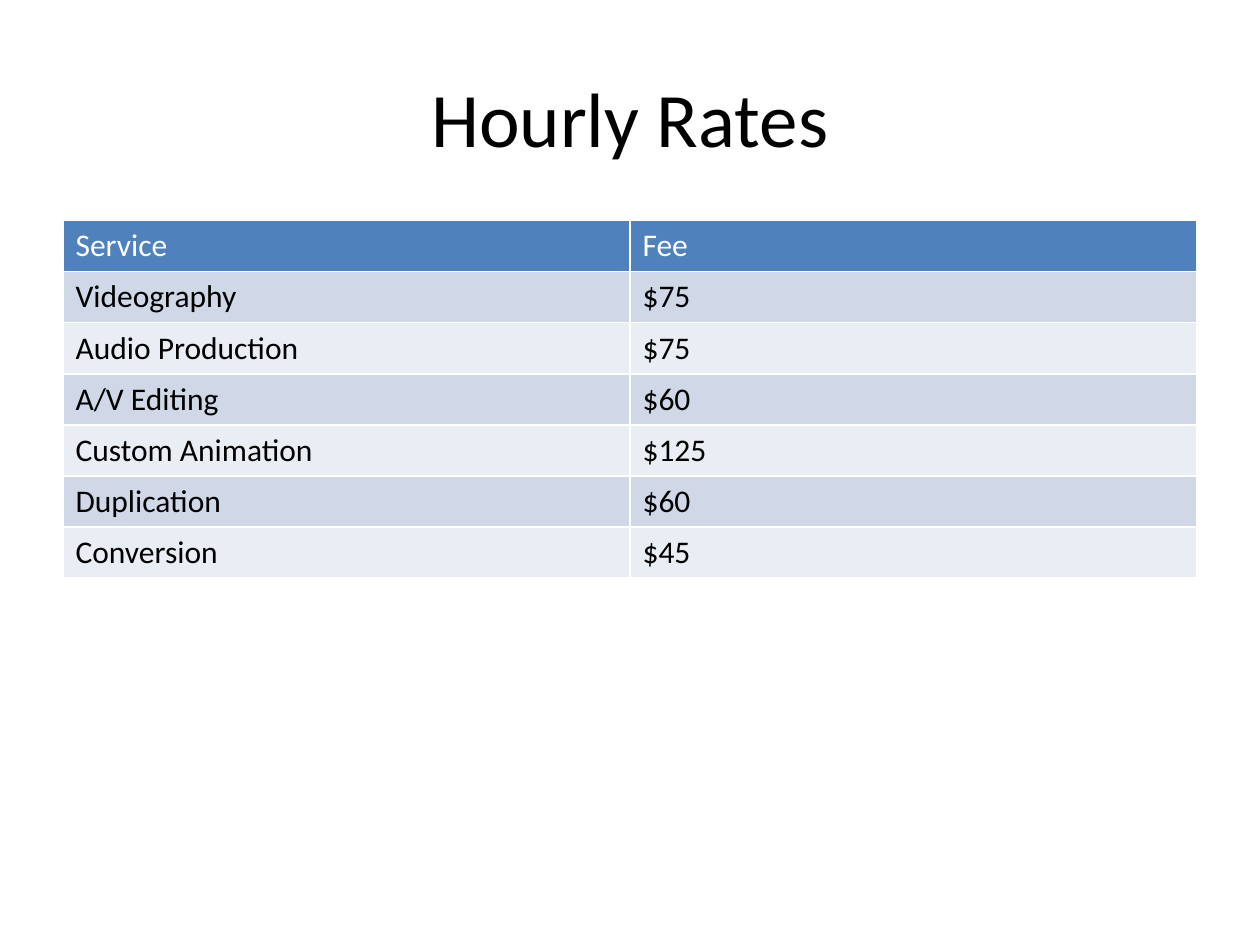
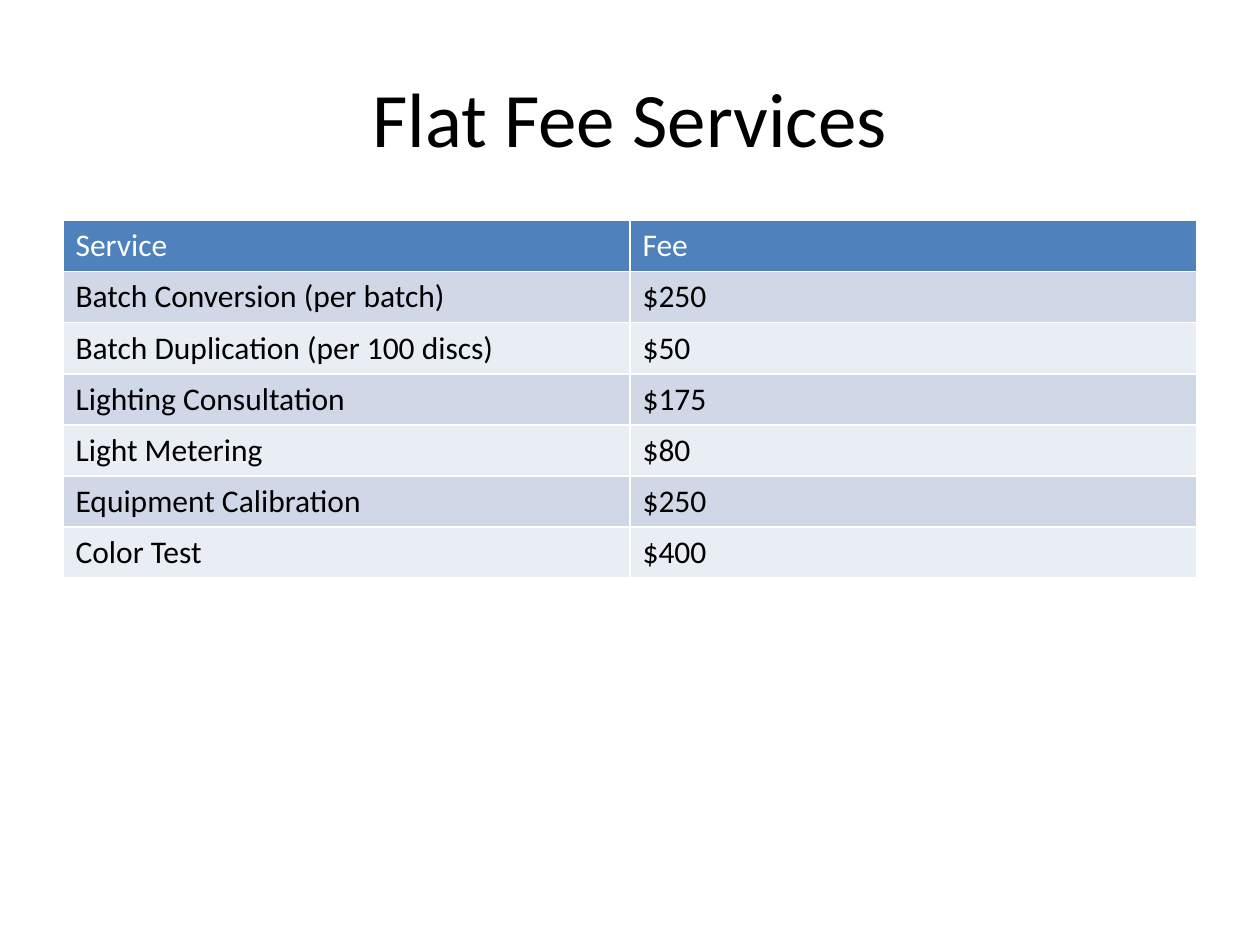
from pptx import Presentation
from pptx.dml.color import RGBColor
from pptx.enum.text import MSO_ANCHOR, PP_ALIGN
from pptx.util import Inches, Pt

LEFT, CENTER = PP_ALIGN.LEFT, PP_ALIGN.CENTER
MIDDLE = MSO_ANCHOR.MIDDLE

BLACK = RGBColor(0x00, 0x00, 0x00)
WHITE = RGBColor(0xFF, 0xFF, 0xFF)
HEADER_BLUE = RGBColor(0x4F, 0x81, 0xBD)
BANDS = [RGBColor(0xE9, 0xED, 0xF4), RGBColor(0xD0, 0xD8, 0xE8)]
FONT = "Calibri"

HEADINGS = ("Service", "Fee")
PRICE_LISTS = {
    "Hourly Rates": [
        ("Videography", "$75"),
        ("Audio Production", "$75"),
        ("A/V Editing", "$60"),
        ("Custom Animation", "$125"),
        ("Duplication", "$60"),
        ("Conversion", "$45"),
    ],
    "Flat Fee Services": [
        ("Batch Conversion (per batch)", "$250"),
        ("Batch Duplication (per 100 discs)", "$50"),
        ("Lighting Consultation", "$175"),
        ("Light Metering", "$80"),
        ("Equipment Calibration", "$250"),
        ("Color Test", "$400"),
    ],
}


def write(frame, text, size=18, color=BLACK, align=LEFT):
    frame.text = text
    paragraph = frame.paragraphs[0]
    paragraph.alignment = align
    font = paragraph.runs[0].font
    font.name = FONT
    font.size = Pt(size)
    font.bold = False
    font.color.rgb = color


prs = Presentation()
prs.slide_width = Inches(10)
prs.slide_height = Inches(7.5)
title_only = prs.slide_layouts[5]

margin = int(prs.slide_width * 0.05)
content_width = prs.slide_width - 2 * margin
title_top = int(prs.slide_height * 0.04)
title_height = Inches(1.25)
table_top = Inches(1.75)
table_height = Inches(2.84)

for heading, services in PRICE_LISTS.items():
    slide = prs.slides.add_slide(title_only)
    title = slide.shapes.title
    title.left, title.top = margin, title_top
    title.width, title.height = content_width, title_height
    title.text_frame.vertical_anchor = MIDDLE
    write(title.text_frame, heading, size=44, align=CENTER)

    rows = [HEADINGS] + services
    rates = slide.shapes.add_table(
        len(rows), len(HEADINGS), margin, table_top, content_width, table_height
    ).table
    for r, row in enumerate(rows):
        for c, entry in enumerate(row):
            cell = rates.cell(r, c)
            cell.fill.solid()
            cell.fill.fore_color.rgb = BANDS[r % 2] if r else HEADER_BLUE
            write(cell.text_frame, entry, color=BLACK if r else WHITE)

prs.save("out.pptx")
